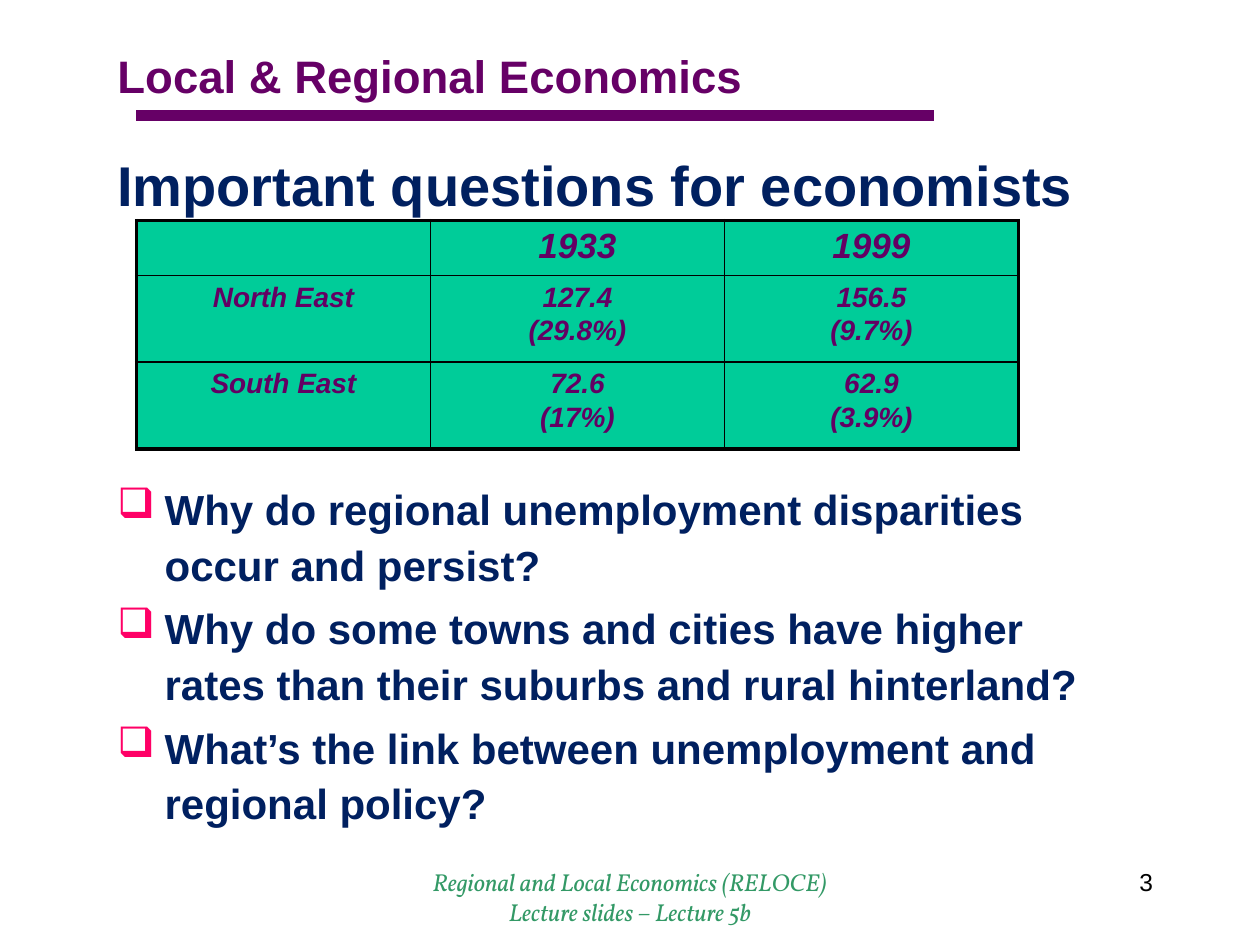
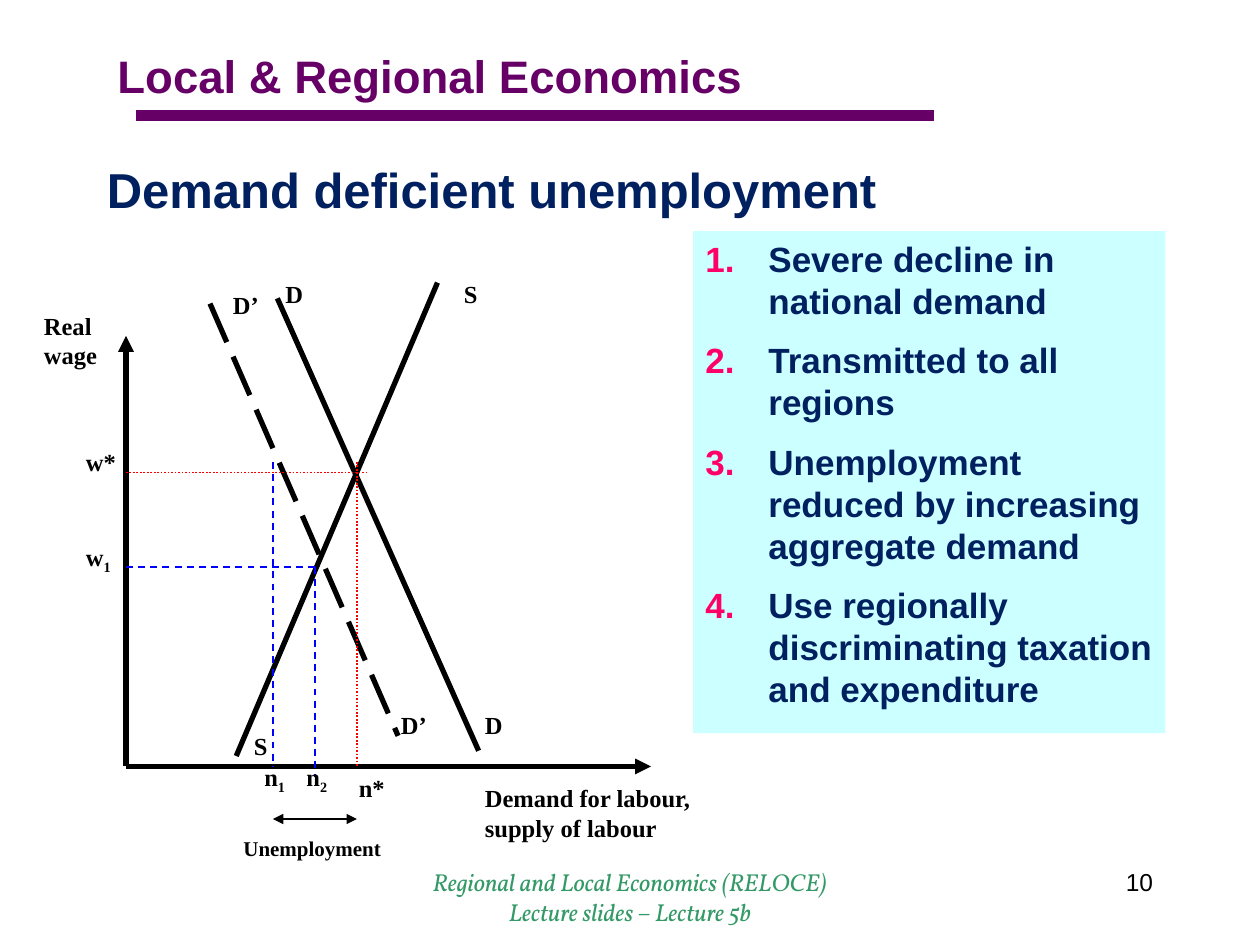
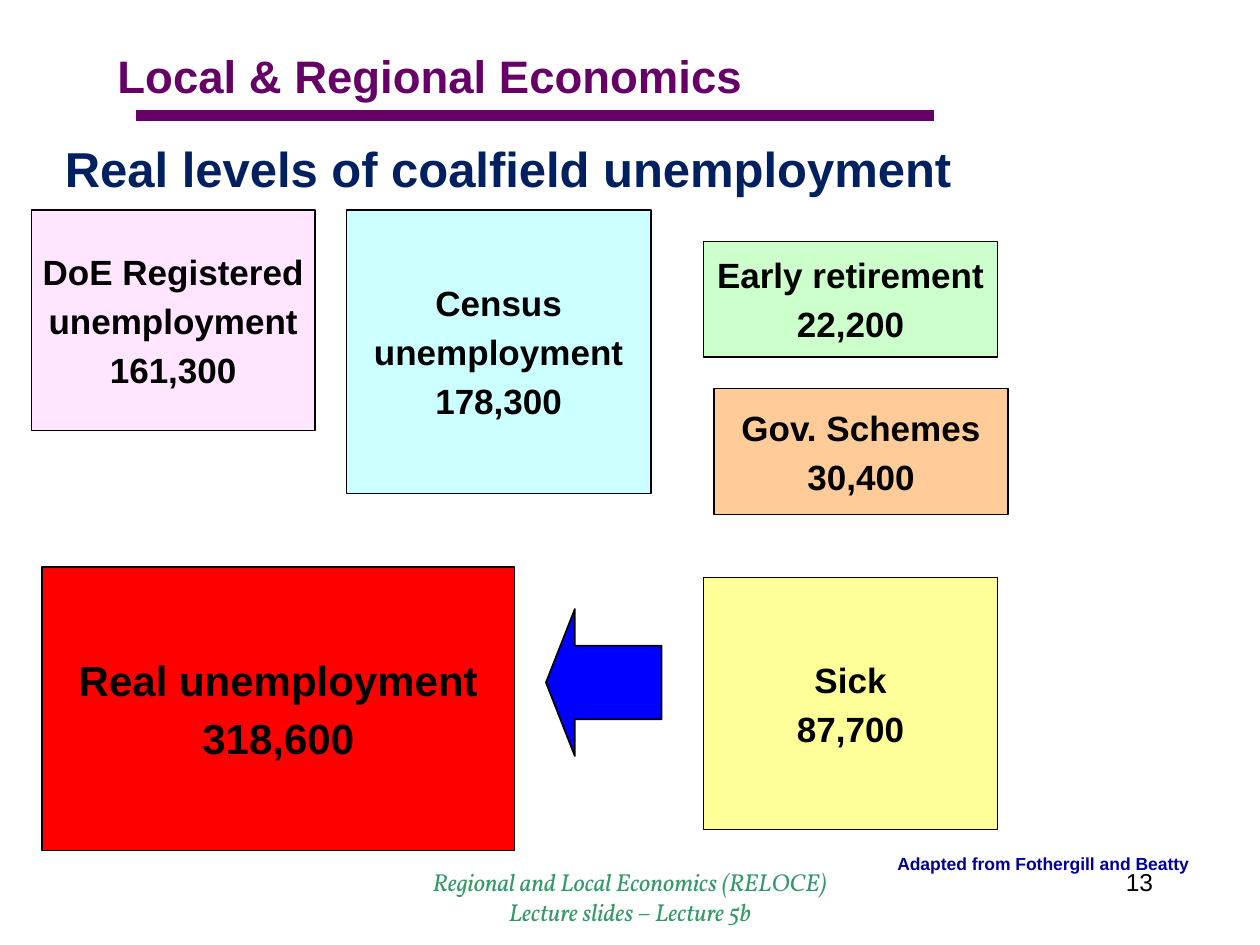
from lxml import etree
from pptx import Presentation
from pptx.dml.color import RGBColor as RGB
from pptx.enum.dml import MSO_LINE
from pptx.enum.shapes import MSO_CONNECTOR, MSO_SHAPE as SHAPE
from pptx.enum.text import MSO_ANCHOR as ANCHOR, PP_ALIGN as ALIGN
from pptx.oxml.ns import qn
from pptx.util import Pt

COLORS = {
    "purple": "660066", "plum": "630063", "navy": "002060", "ink": "000000",
    "pink": "FF0066", "teal": "00CC99", "footer": "339966", "credit": "000099",
    "cyan": "CCFFFF", "red": "FF0000", "blue": "0000FF", "lilac": "FFCCFF",
    "peach": "FFCC99", "yellow": "FFFF99", "mint": "CCFFCC",
}
BRAND = dict(size=26, bold=True, color="purple")
TITLE = dict(size=28, bold=True, color="navy")
BULLET = dict(size=24, bold=True, color="navy")
POINT = dict(size=20, bold=True, color="navy")
CELL = dict(size=16, bold=True, italic=True, color="plum")
LABEL = dict(size=14, bold=True, name="Times New Roman")
FIGURE = dict(size=20, bold=True)
FOOTER = dict(size=14, italic=True, name="Vollkorn", color="footer")


def rgb(name):
    return RGB.from_string(COLORS[name])


def sub(parent, tag, **attrs):
    return etree.SubElement(parent, qn(tag), attrs)


def style_run(r, fmt):
    fmt = {"name": "Arial", "color": "ink", **fmt}
    r.font.color.rgb = rgb(fmt.pop("color"))
    fmt["size"] = Pt(fmt["size"])
    for key, value in fmt.items():
        setattr(r.font, key, value)


def add_bullet(p, tag, indent, **attrs):
    pPr = p._p.get_or_add_pPr()
    pPr.set("marL", str(Pt(indent)))
    pPr.set("indent", str(-Pt(indent)))
    sub(sub(pPr, "a:buClr"), "a:srgbClr", val=COLORS["pink"])
    sub(pPr, tag, **attrs)


def write(tf, lines, fmt, align=ALIGN.LEFT, gap=0, spacing=None, bullet=None):
    """Fill a text frame; text after "_" in a line becomes a subscript."""
    for i, line in enumerate(lines):
        p = tf.add_paragraph() if i else tf.paragraphs[0]
        if bullet:
            add_bullet(p, **bullet)
        p.alignment = align
        p.space_before = Pt(gap if i else 0)
        if spacing:
            p.line_spacing = spacing
        base, _, index = line.partition("_")
        for text, offset in ((base, 0), (index, -25000)):
            if text:
                r = p.add_run()
                r.text = text
                style_run(r, fmt)
                if offset:
                    r._r.get_or_add_rPr().set("baseline", str(offset))


def add_text(s, box, lines, fmt, anchor=ANCHOR.TOP, **layout):
    sp = s.shapes.add_textbox(*map(Pt, box))
    tf = sp.text_frame
    tf.word_wrap = True
    tf.vertical_anchor = anchor
    write(tf, lines, fmt, **layout)
    return sp


def add_line(s, start, end, color="ink", width=3, dash=None, arrows=()):
    """Draw a line; arrows lists the ends ("headEnd", "tailEnd") that carry one."""
    sp = s.shapes.add_connector(MSO_CONNECTOR.STRAIGHT, *map(Pt, start + end))
    sp.line.color.rgb = rgb(color)
    sp.line.width = Pt(width)
    if dash:
        sp.line.dash_style = dash
    spPr = sp._element.spPr
    for arrow in arrows:
        sub(spPr.find(qn("a:ln")), f"a:{arrow}", type="triangle")
    sub(spPr, "a:effectLst")


def add_block(s, box, fill, kind=SHAPE.RECTANGLE, alpha=None, outline=True):
    sp = s.shapes.add_shape(kind, *map(Pt, box))
    sp.shadow.inherit = False
    sp.fill.solid()
    sp.fill.fore_color.rgb = rgb(fill)
    if alpha:
        clr = sp._element.spPr.find(qn("a:solidFill"))[0]
        sub(clr, "a:alpha", val=str(alpha * 1000))
    if outline:
        sp.line.color.rgb = rgb("ink")
        sp.line.width = Pt(1)
    else:
        sp.line.fill.background()
    return sp


def add_figure(s, box, fill, lines, size=20, alpha=None):
    tf = add_block(s, box, fill, alpha=alpha).text_frame
    tf.word_wrap = False
    tf.vertical_anchor = ANCHOR.MIDDLE
    write(tf, lines, {**FIGURE, "size": size}, ALIGN.CENTER, gap=size * 0.2)


def add_borders(cell, widths):
    tcPr = cell._tc.get_or_add_tcPr()
    for i, (side, width) in enumerate(zip("LRTB", widths)):
        ln = etree.Element(qn(f"a:ln{side}"), w=str(Pt(width)))
        sub(sub(ln, "a:solidFill"), "a:srgbClr", val=COLORS["ink"])
        tcPr.insert(i, ln)


def add_table(s, left, top, col_width, heights, rows):
    n_rows, n_cols = len(rows), len(rows[0])
    frame = s.shapes.add_table(n_rows, n_cols, Pt(left), Pt(top),
                               Pt(col_width * n_cols), Pt(sum(heights)))
    table = frame.table
    for column in table.columns:
        column.width = Pt(col_width)
    for i, (row, height) in enumerate(zip(rows, heights)):
        table.rows[i].height = Pt(height)
        for j, text in enumerate(row):
            cell = table.cell(i, j)
            cell.fill.solid()
            cell.fill.fore_color.rgb = rgb("teal")
            edges = (j == 0, j == n_cols - 1, i == 0, i == n_rows - 1)
            add_borders(cell, [2.25 if edge else 1 for edge in edges])
            fmt = CELL if i else {**CELL, "size": 20}
            write(cell.text_frame, text.split("\n"), fmt, ALIGN.CENTER, gap=1.6)


def new_slide(prs, number, title, title_box, title_size=28):
    s = prs.slides.add_slide(prs.slide_layouts[6])
    add_text(s, (60, 24, 480, 39), ["Local & Regional Economics"], BRAND)
    add_line(s, (78, 66), (534, 66), "purple", 6)
    add_text(s, title_box, [title], {**TITLE, "size": title_size}, ANCHOR.MIDDLE)
    add_text(s, (204, 492, 312, 36),
             ["Regional and Local Economics (RELOCE)", "Lecture slides – Lecture 5b"],
             FOOTER, align=ALIGN.CENTER)
    add_text(s, (516, 492, 150, 36), [str(number)], dict(size=14), align=ALIGN.RIGHT)
    return s


def questions_slide(prs):
    s = new_slide(prs, 3, "Important questions for economists", (60, 84, 612, 42), 32)
    add_table(s, 78, 126, 168, (31.5, 49.5, 49.5), [
        ("", "1933", "1999"),
        ("North East", "127.4\n(29.8%)", "156.5\n(9.7%)"),
        ("South East", "72.6\n(17%)", "62.9\n(3.9%)"),
    ])
    add_text(s, (60, 270, 587, 222), [
        "Why do regional unemployment disparities occur and persist?",
        "Why do some towns and cities have higher rates than their suburbs and rural hinterland?",
        "What’s the link between unemployment and regional policy?",
    ], BULLET, gap=4.8, spacing=1.1, bullet=dict(tag="a:buChar", indent=27, char="❑"))


def labour_market_diagram(s):
    origin, w_star, w_1 = (72, 438), 270, 324
    n_1, n_2, n_star = 156, 180, 204
    guide = dict(color="blue", width=1, dash=MSO_LINE.DASH)
    equilibrium = dict(color="red", width=1, dash=MSO_LINE.ROUND_DOT)

    for end in ((72, 192), (372, 438)):
        add_line(s, origin, end, arrows=["tailEnd"])
    add_line(s, (158.5, 170.5), (273.5, 429))
    add_line(s, (135, 432), (250, 161.5))
    add_line(s, (120, 173.5), (227.5, 420.5), dash=MSO_LINE.LONG_DASH)
    add_line(s, (72, w_star), (210, w_star), **equilibrium)
    add_line(s, (n_star, 264), (n_star, 438), **equilibrium)
    add_line(s, (72, w_1), (n_2, w_1), **guide)
    add_line(s, (n_2, w_1), (n_2, 444), **guide)
    add_line(s, (n_1, 264), (n_1, 438), **guide)
    add_line(s, (n_1, 468), (n_star, 468), width=1, arrows=["headEnd", "tailEnd"])

    for text, left, top, width in (
        ("w*", 42, 252, 42), ("w_1", 42, 306, 42),
        ("n_1", 144, 432, 30), ("n_2", 168, 432, 30), ("n*", 198, 438, 30),
        ("S", 138, 414, 25), ("S", 258, 156, 25),
        ("D", 156, 156, 25), ("D", 270, 402, 25),
        ("D’", 126, 162, 30), ("D’", 222, 402, 30),
    ):
        add_text(s, (left, top, width, 24), [text], LABEL)
    add_text(s, (18, 174, 54, 41), ["Real wage"], LABEL)
    add_text(s, (270, 444, 150, 41), ["Demand for labour, supply of labour"], LABEL)
    add_text(s, (132, 474, 96, 22), ["Unemployment"], {**LABEL, "size": 12})


def demand_slide(prs):
    s = new_slide(prs, 10, "Demand deficient unemployment", (54, 84, 528, 48))
    labour_market_diagram(s)
    tf = add_block(s, (396, 132, 270, 287), "cyan", outline=False).text_frame
    tf.word_wrap = True
    tf.vertical_anchor = ANCHOR.TOP
    write(tf, [
        "Severe decline in national demand",
        "Transmitted to all regions",
        "Unemployment reduced by increasing aggregate demand",
        "Use regionally discriminating taxation and expenditure",
    ], POINT, gap=10, bullet=dict(tag="a:buAutoNum", indent=36, type="arabicPeriod"))


def coalfield_slide(prs):
    s = new_slide(prs, 13, "Real levels of coalfield unemployment", (30, 72, 612, 48))
    add_figure(s, (18, 120, 162, 126), "lilac",
               ["DoE Registered", "unemployment", "161,300"], alpha=50)
    add_figure(s, (198, 120, 174, 162), "cyan", ["Census", "unemployment", "178,300"])
    add_figure(s, (402, 138, 168, 66), "mint", ["Early retirement", "22,200"])
    add_figure(s, (408, 222, 168, 72), "peach", ["Gov. Schemes", "30,400"])
    add_figure(s, (402, 330, 168, 144), "yellow", ["Sick", "87,700"])
    add_figure(s, (24, 324, 270, 162), "red", ["Real unemployment", "318,600"], size=24)
    arrow = add_block(s, (312, 348, 66, 84), "blue", SHAPE.LEFT_ARROW)
    arrow.adjustments[0], arrow.adjustments[1] = 0.5, 0.25
    add_text(s, (500, 484, 192, 19), ["Adapted from Fothergill and Beatty"],
             dict(size=10, bold=True, color="credit"), align=ALIGN.CENTER)


def main():
    prs = Presentation()
    prs.slide_width, prs.slide_height = Pt(720), Pt(540)
    questions_slide(prs)
    demand_slide(prs)
    coalfield_slide(prs)
    prs.save("out.pptx")


if __name__ == "__main__":
    main()
